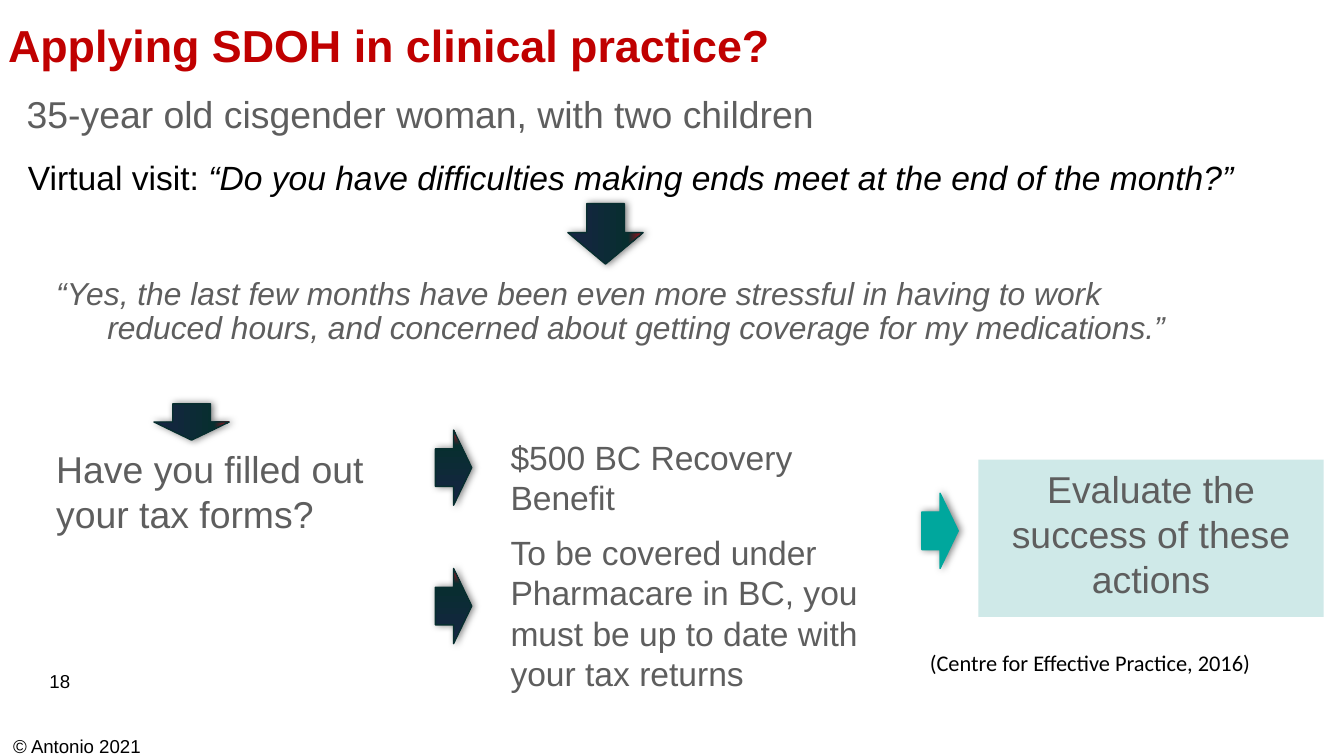
"""Build a slide on applying social determinants of health in clinical practice."""
import pptx
import pptx.dml.color
import pptx.enum.shapes
import pptx.enum.text
import pptx.oxml
import pptx.oxml.ns
import pptx.util
from pptx.util import Inches, Pt

COLORS = {
    "title": "C00000", "black": "000000", "grey": "5E5E5E",
    "teal": "00A79D", "pale": "CFE9E8",
    "navy": "172444", "forest": "072E2F", "red": "B40C18",
}
GRADIENT = [(0, "navy"), (80, "forest"), (100, "red")]

TEXTS = [
    {"box": (0, -0.13, 9.69, 0.93), "runs": ["Applying SDOH in clinical practice?"],
     "size": 24, "color": "title", "bold": True, "middle": True, "inset": 0.06},
    {"box": (0.1, 0.63, 10, 0.62), "runs": ["35-year old cisgender woman, with two children"],
     "size": 20, "indent": (0.38, -0.38)},
    {"box": (-0.1, 1.03, 10.1, 0.6), "size": 18, "color": "black", "indent": (0.21, 0),
     "spacing": 1.3, "italic_from": 1,
     "runs": ["Virtual visit: ",
              "“Do you have difficulties making ends meet at the end of the month?”"]},
    {"box": (0.32, 2.02, 8.6, 0.62), "size": 17, "indent": (0.38, -0.38),
     "spacing": 0.9, "italic_from": 0,
     "runs": ["“Yes, the last few months have been even more stressful in having to work "
              "reduced hours, and concerned about getting coverage for my medications.”"]},
    {"box": (0.32, 3.27, 2.67, 0.83), "runs": ["Have you filled out your tax forms?"], "size": 20},
    {"box": (3.7, 3.2, 3.11, 0.71), "runs": ["$500 BC Recovery Benefit"], "size": 18},
    {"box": (3.7, 3.91, 3.11, 1.31), "size": 18,
     "runs": ["To be covered under Pharmacare in BC, you must be up to date with your tax returns"]},
    {"box": (7.28, 3.42, 2.57, 1.17), "runs": ["Evaluate the success of these actions"],
     "size": 20, "fill": "pale", "center": True},
    {"box": (6.82, 4.78, 3.03, 0.3), "runs": ["(Centre for Effective Practice, 2016)"],
     "size": 12, "color": "black", "font": "Calibri"},
    {"box": (0.27, 4.92, 0.43, 0.3), "runs": ["18"], "size": 10, "color": "black", "middle": True},
    {"box": (0, 5.42, 1.8, 0.27), "runs": ["© Antonio 2021"], "size": 10, "color": "black"},
]

ARROWS = [
    {"box": (4.28, 1.46, 0.45, 0.56), "rotation": 90, "head": 0.52},
    {"box": (1.29, 2.86, 0.27, 0.56), "rotation": 90},
    {"box": (3.24, 3.2, 0.27, 0.56)},
    {"box": (3.24, 4.23, 0.27, 0.56)},
    {"box": (6.86, 3.67, 0.27, 0.56), "fill": "teal"},
]


def rgb(name):
    return pptx.dml.color.RGBColor.from_string(COLORS[name])


def parse_drawing(tag, content):
    namespace = pptx.oxml.ns.nsdecls("a")
    return pptx.oxml.parse_xml(f"<a:{tag} {namespace}>{content}</a:{tag}>")


def fill_gradient(shape):
    shape.fill.gradient()
    shape.fill.gradient_angle = 90
    stops = "".join(
        f'<a:gs pos="{position * 1000}"><a:srgbClr val="{COLORS[name]}"/></a:gs>'
        for position, name in GRADIENT
    )
    stop_list = shape._element.spPr.find(".//" + pptx.oxml.ns.qn("a:gsLst"))
    stop_list.getparent().replace(stop_list, parse_drawing("gsLst", stops))


def add_shadow(shape):
    shape.shadow.inherit = False
    effects = shape._element.spPr.find(pptx.oxml.ns.qn("a:effectLst"))
    shadow = parse_drawing(
        "effectLst",
        f'<a:outerShdw blurRad="{Pt(4)}" dist="{Pt(1)}" dir="0" rotWithShape="0">'
        f'<a:srgbClr val="{COLORS["black"]}"><a:alpha val="50000"/></a:srgbClr></a:outerShdw>',
    )
    effects.getparent().replace(effects, shadow)


def add_arrow(slide, arrow):
    shape = slide.shapes.add_shape(
        pptx.enum.shapes.MSO_SHAPE.RIGHT_ARROW, *map(Inches, arrow["box"]))
    shape.rotation = arrow.get("rotation", 0)
    shape.adjustments[1] = arrow.get("head", 0.5)
    if "fill" in arrow:
        shape.fill.solid()
        shape.fill.fore_color.rgb = rgb(arrow["fill"])
    else:
        fill_gradient(shape)
    shape.line.color.rgb = rgb(arrow.get("fill", "forest"))
    shape.line.width = Pt(0.75)
    add_shadow(shape)


def add_text(slide, item):
    box = tuple(map(Inches, item["box"]))
    if "fill" in item:
        shape = slide.shapes.add_shape(pptx.enum.shapes.MSO_SHAPE.RECTANGLE, *box)
        shape.shadow.inherit = False
        shape.fill.solid()
        shape.fill.fore_color.rgb = rgb(item["fill"])
        shape.line.fill.background()
    else:
        shape = slide.shapes.add_textbox(*box)
    frame = shape.text_frame
    frame.word_wrap = True
    anchors = pptx.enum.text.MSO_ANCHOR
    frame.vertical_anchor = anchors.MIDDLE if item.get("middle") else anchors.TOP
    if "inset" in item:
        inset = Inches(item["inset"])
        frame.margin_left = frame.margin_right = inset
        frame.margin_top = frame.margin_bottom = inset
    paragraph = frame.paragraphs[0]
    alignments = pptx.enum.text.PP_ALIGN
    paragraph.alignment = alignments.CENTER if item.get("center") else alignments.LEFT
    paragraph.line_spacing = item.get("spacing", 1.0)
    if "indent" in item:
        left, first = item["indent"]
        properties = paragraph._p.get_or_add_pPr()
        properties.set("marL", str(Inches(left)))
        properties.set("indent", str(Inches(first)))
    for index, text in enumerate(item["runs"]):
        run = paragraph.add_run()
        run.text = text
        run.font.name = item.get("font", "Arial")
        run.font.size = Pt(item["size"])
        run.font.color.rgb = rgb(item.get("color", "grey"))
        run.font.bold = item.get("bold", False)
        run.font.italic = index >= item.get("italic_from", len(item["runs"]))


def main():
    presentation = pptx.Presentation()
    presentation.slide_width = Inches(10)
    presentation.slide_height = Inches(10 * 9 / 16)
    slide = presentation.slides.add_slide(presentation.slide_layouts[6])
    for item in TEXTS:
        add_text(slide, item)
    for arrow in ARROWS:
        add_arrow(slide, arrow)
    presentation.save("out.pptx")


if __name__ == "__main__":
    main()
